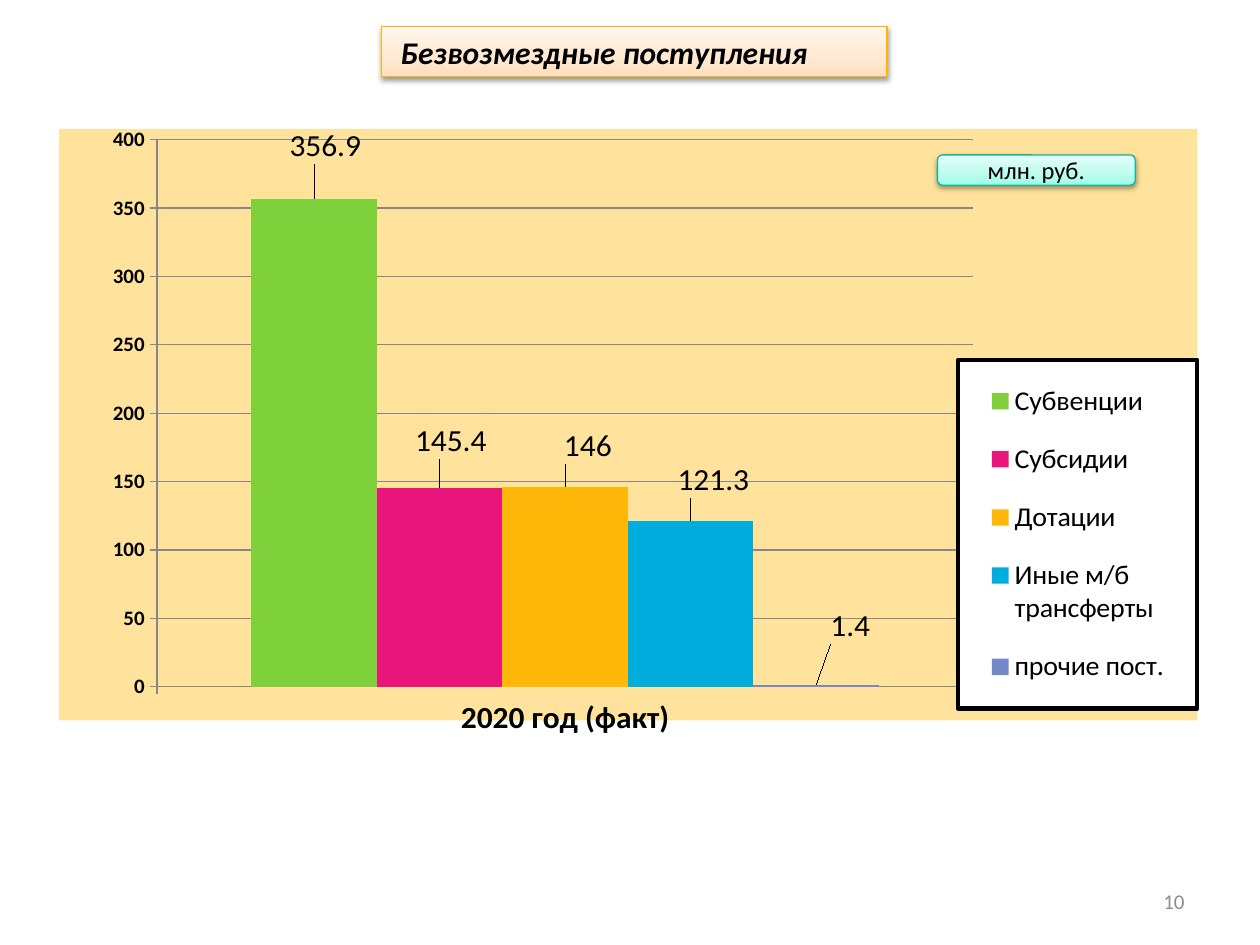
from lxml.etree import SubElement
from pptx import Presentation
from pptx.chart.data import CategoryChartData
from pptx.dml.color import RGBColor
from pptx.enum.chart import XL_CHART_TYPE as ChartType, XL_LABEL_POSITION as LabelPos
from pptx.enum.chart import XL_LEGEND_POSITION as LegendPos, XL_TICK_MARK as Tick
from pptx.enum.shapes import MSO_SHAPE as Shape
from pptx.enum.text import MSO_ANCHOR as Anchor, MSO_AUTO_SIZE as AutoSize, PP_ALIGN as Align
from pptx.oxml import parse_xml
from pptx.oxml.ns import nsdecls, qn
from pptx.util import Inches, Pt

FONT = "Calibri"
BLACK = RGBColor(0x00, 0x00, 0x00)
GREY = RGBColor(0x8C, 0x8C, 0x8C)
GRID = RGBColor(0x87, 0x87, 0x87)
SAND = RGBColor(0xFF, 0xE3, 0x9D)
ORANGE_LINE = RGBColor(0xFE, 0xB6, 0x04)
TEAL_LINE = RGBColor(0x16, 0xB3, 0x9E)
PEACH = [RGBColor(0xFF, 0xDF, 0xBC), RGBColor(0xFF, 0xE8, 0xD0), RGBColor(0xFF, 0xF6, 0xED)]
MINT = [RGBColor(0x9D, 0xFD, 0xE8), RGBColor(0xBB, 0xFC, 0xED), RGBColor(0xE4, 0xFF, 0xF9)]
GRADIENT_STOPS = (0, 35, 100)

CATEGORY = "2020 год (факт)"
# name, value, colour, label shift as a share of the chart's width and height
RECEIPTS = [
    ("Субвенции", 356.9, RGBColor(0x7F, 0xD1, 0x3B), (0.01, -0.05)),
    ("Субсидии", 145.4, RGBColor(0xEA, 0x15, 0x7A), (0.01, -0.04)),
    ("Дотации", 146, RGBColor(0xFE, 0xB8, 0x0A), (0.02, -0.03)),
    ("Иные м/б трансферты", 121.3, RGBColor(0x00, 0xAD, 0xDC), (0.02, -0.03)),
    ("прочие пост.", 1.4, RGBColor(0x73, 0x8A, 0xC8), (0.03, -0.06)),
]


def format_with(target, **values):
    for name, value in values.items():
        setattr(target, name, value)


def style_font(font, size, color=BLACK, **flags):
    format_with(font, name=FONT, size=Pt(size), **flags)
    font.color.rgb = color


def write_line(shape, text, align, size, color=BLACK, **flags):
    paragraph = shape.text_frame.paragraphs[0]
    paragraph.alignment = align
    run = paragraph.add_run()
    run.text = text
    style_font(run.font, size, color, **flags)


def style_plate(shape, colors, line_color):
    """Give a shape a bottom-to-top gradient, a thin outline and a soft shadow."""
    shape.fill.gradient()
    shape.fill.gradient_angle = 90
    properties = shape._element.spPr
    stops = properties.find(".//" + qn("a:gsLst"))
    for stop in list(stops):
        stops.remove(stop)
    for position, color in zip(GRADIENT_STOPS, colors):
        stop = SubElement(stops, qn("a:gs"), pos=str(position * 1000))
        SubElement(stop, qn("a:srgbClr"), val=str(color))
    shape.line.color.rgb = line_color
    shape.line.width = Pt(0.75)
    shape.shadow.inherit = False
    shadow = SubElement(properties.find(qn("a:effectLst")), qn("a:outerShdw"),
                        blurRad=str(Pt(3.1)), dist=str(Pt(1.6)), dir="5400000", rotWithShape="0")
    black = SubElement(shadow, qn("a:srgbClr"), val=str(BLACK))
    SubElement(black, qn("a:alpha"), val="38000")


def place_title(slide, left, top, width, height):
    title = slide.shapes.title
    format_with(title, left=left, top=top, width=width, height=height)
    format_with(title.text_frame, word_wrap=False, auto_size=AutoSize.NONE,
                vertical_anchor=Anchor.MIDDLE, margin_left=Inches(0.15))
    style_plate(title, PEACH, ORANGE_LINE)
    write_line(title, "Безвозмездные поступления", Align.LEFT, 18, bold=True, italic=True)


def place_unit(slide, *box):
    unit = slide.shapes.add_shape(Shape.ROUNDED_RECTANGLE, *box)
    format_with(unit.text_frame, word_wrap=True, vertical_anchor=Anchor.MIDDLE,
                margin_top=0, margin_bottom=0)
    style_plate(unit, MINT, TEAL_LINE)
    write_line(unit, "млн. руб.", Align.CENTER, 14)


def place_page_number(slide, *box):
    number = slide.shapes.add_textbox(*box)
    format_with(number.text_frame, word_wrap=True, vertical_anchor=Anchor.MIDDLE)
    write_line(number, "10", Align.RIGHT, 12, GREY)


def manual_layout(x, y, size=None, inner=False, absolute=True):
    parts = ['<c:layoutTarget val="inner"/>'] if inner else []
    if absolute:
        parts.append('<c:xMode val="edge"/><c:yMode val="edge"/>')
    parts.append(f'<c:x val="{x}"/><c:y val="{y}"/>')
    if size:
        parts.append(f'<c:w val="{size[0]}"/><c:h val="{size[1]}"/>')
    return parse_xml(f'<c:layout {nsdecls("c")}><c:manualLayout>{"".join(parts)}'
                     '</c:manualLayout></c:layout>')


def box_properties(fill, line=None, width=0):
    outline = (f'<a:ln w="{Pt(width)}"><a:solidFill><a:srgbClr val="{line}"/></a:solidFill></a:ln>'
               if line is not None else "<a:ln><a:noFill/></a:ln>")
    return parse_xml(f'<c:spPr {nsdecls("c", "a")}><a:solidFill><a:srgbClr val="{fill}"/>'
                     f'</a:solidFill>{outline}</c:spPr>')


def style_axes(chart):
    for axis, size in ((chart.category_axis, 18), (chart.value_axis, 12)):
        format_with(axis, major_tick_mark=Tick.OUTSIDE, minor_tick_mark=Tick.NONE)
        axis.format.line.color.rgb = GRID
        style_font(axis.tick_labels.font, size, bold=True)
    values = chart.value_axis
    format_with(values, minimum_scale=0, maximum_scale=400, major_unit=50,
                has_major_gridlines=True)
    values.major_gridlines.format.line.color.rgb = GRID


def style_legend(chart):
    chart.has_legend = True
    legend = chart.legend
    format_with(legend, position=LegendPos.RIGHT, include_in_layout=False)
    style_font(legend.font, 16)
    element = legend._element
    for old in element.findall(qn("c:layout")):
        element.remove(old)
    element.find(qn("c:legendPos")).addnext(manual_layout(0.79, 0.39, (0.21, 0.59)))
    element.find(qn("c:txPr")).addprevious(box_properties("FFFFFF", BLACK, 2.5))


def place_receipts_chart(slide, *box):
    data = CategoryChartData()
    data.categories = [CATEGORY]
    for name, value, _, _ in RECEIPTS:
        data.add_series(name, [value])
    chart = slide.shapes.add_chart(ChartType.COLUMN_CLUSTERED, *box, data).chart
    chart.has_title = False
    style_font(chart.font, 18)
    chart._chartSpace.find(qn("c:txPr")).addprevious(box_properties(SAND))

    plot = chart.plots[0]
    format_with(plot, gap_width=150, overlap=0, vary_by_categories=False)
    for series, (_, _, color, shift) in zip(plot.series, RECEIPTS):
        series.format.fill.solid()
        series.format.fill.fore_color.rgb = color
        label = series.points[0].data_label
        style_font(label.font, 18)
        label.position = LabelPos.OUTSIDE_END
        index = series._element.find(".//" + qn("c:dLbl")).find(qn("c:idx"))
        index.addnext(manual_layout(*shift, absolute=False))
        series.data_labels.show_value = True

    style_axes(chart)
    style_legend(chart)
    plot_area = chart._chartSpace.find(".//" + qn("c:plotArea"))
    for old in plot_area.findall(qn("c:layout")):
        plot_area.remove(old)
    plot_area.insert(0, manual_layout(0.086, 0.018, (0.717, 0.925), inner=True))


def main():
    deck = Presentation()
    format_with(deck, slide_width=Inches(10), slide_height=Inches(7.5))
    slide = deck.slides.add_slide(deck.slide_layouts[5])
    place_title(slide, Inches(3.03), Inches(0.21), Inches(4.01), Inches(0.4))
    place_receipts_chart(slide, Inches(0.47), Inches(1.01), Inches(9.05), Inches(4.83))
    place_unit(slide, Inches(7.44), Inches(1.23), Inches(1.57), Inches(0.24))
    place_page_number(slide, Inches(7.17), Inches(6.95), Inches(2.33), Inches(0.4))
    deck.save("out.pptx")


if __name__ == "__main__":
    main()
